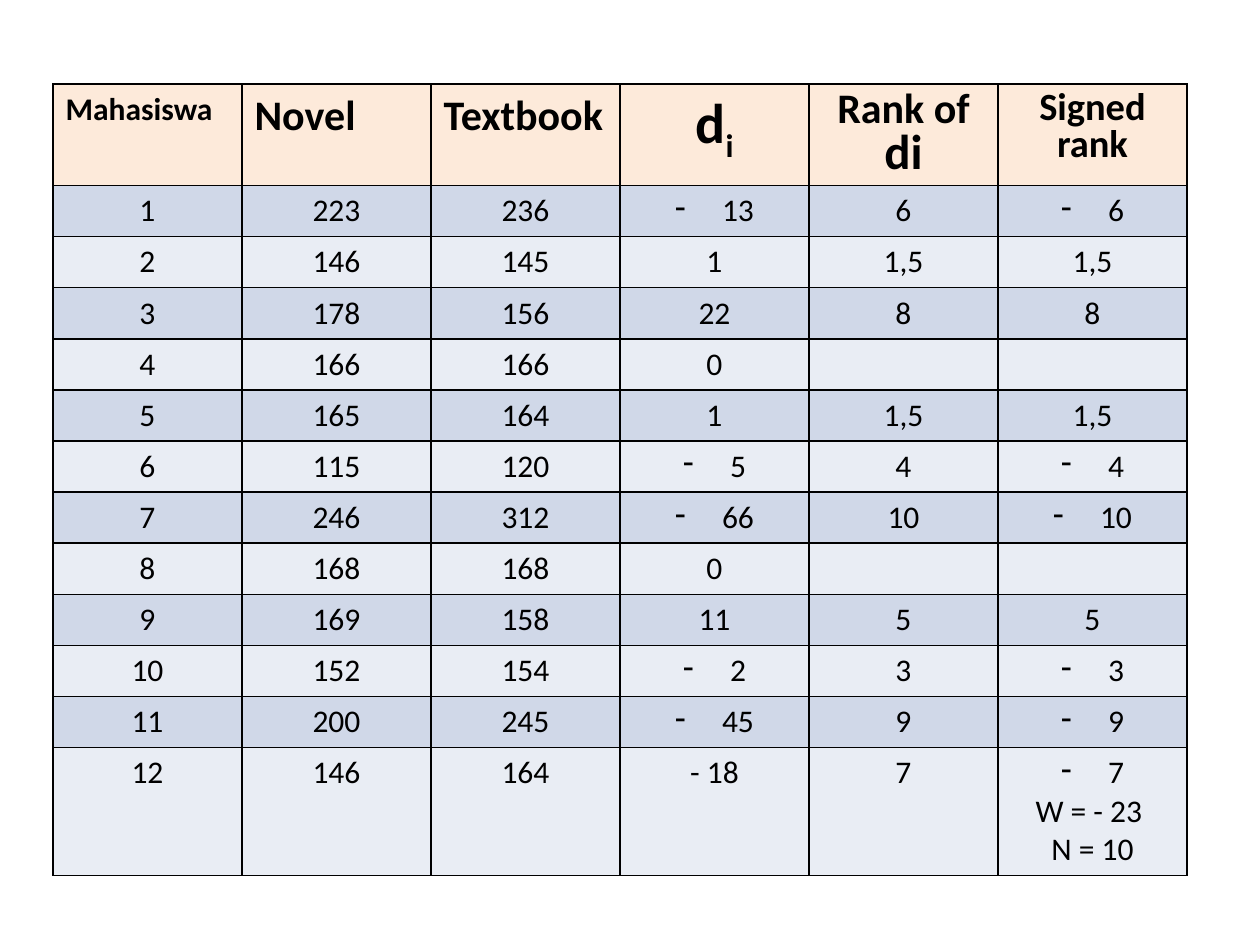
from dataclasses import dataclass

from lxml import etree
from pptx import Presentation
from pptx import util as u
from pptx.dml.color import RGBColor
from pptx.enum import text
from pptx.oxml import ns

PX = 914400 / 126


def px(n):
    return u.Emu(round(n * PX))


@dataclass(frozen=True)
class Theme:
    font: str = "Calibri"
    ink: str = "000000"
    header: str = "FDEADA"
    bands: tuple = ("D0D8E8", "E9EDF4")
    body_size: int = 18
    border: float = 1
    bullet_indent: int = 47


# Each heading: runs as (text, size, baseline percent), centred, line spacing
HEADINGS = [
    ([("Mahasiswa", 18, 0)], False, None),
    ([("Novel", 24, 0)], False, None),
    ([("Textbook", 24, 0)], False, None),
    ([("d", 32, 0), ("i", 32, -25)], True, None),
    ([("Rank of ", 24, 0), ("di", 28, 0)], True, 0.8),
    ([("Signed rank", 22, 0)], True, 0.8),
]

# Novel, textbook, difference, rank, signed rank; "-13" becomes a dash bullet
SCORES = [
    ("223", "236", "-13", "6", "-6"),
    ("146", "145", "1", "1,5", "1,5"),
    ("178", "156", "22", "8", "8"),
    ("166", "166", "0", "", ""),
    ("165", "164", "1", "1,5", "1,5"),
    ("115", "120", "-5", "4", "-4"),
    ("246", "312", "-66", "10", "-10"),
    ("168", "168", "0", "", ""),
    ("169", "158", "11", "5", "5"),
    ("152", "154", "-2", "3", "-3"),
    ("200", "245", "-45", "9", "-9"),
    ("146", "164", "- 18", "7", "-7\nW = - 23 \nN = 10"),
]


class Deck:
    """Holds the theme and the current slide."""

    def __init__(self, theme, width, height):
        self.theme = theme
        self.prs = Presentation()
        self.prs.slide_width, self.prs.slide_height = px(width), px(height)
        self.s = None

    def slide(self):
        self.s = self.prs.slides.add_slide(self.prs.slide_layouts[6])

    def table(self, left, top, col_width, cols, heights):
        frame = self.s.shapes.add_table(
            len(heights), cols, px(left), px(top),
            px(col_width * cols), px(sum(heights)))
        table = frame.table
        table.first_row = table.horz_banding = False
        for column in table.columns:
            column.width = px(col_width)
        for row, height in zip(table.rows, heights):
            row.height = px(height)
        return table

    def paint(self, cell, fill):
        """Gives the cell its borders and fill."""
        tcPr = cell._tc.get_or_add_tcPr()
        for side in ("lnL", "lnR", "lnT", "lnB"):
            ln = etree.SubElement(tcPr, ns.qn(f"a:{side}"),
                                  w=str(u.Pt(self.theme.border)))
            solid = etree.SubElement(ln, ns.qn("a:solidFill"))
            etree.SubElement(solid, ns.qn("a:srgbClr"), val=self.theme.ink)
        cell.fill.solid()
        cell.fill.fore_color.rgb = RGBColor.from_string(fill)

    def style(self, r, size, bold=False):
        r.font.name = self.theme.font
        r.font.size = u.Pt(size)
        r.font.bold = bold
        r.font.color.rgb = RGBColor.from_string(self.theme.ink)

    def bullet(self, p):
        pPr = p._p.get_or_add_pPr()
        indent = px(self.theme.bullet_indent)
        pPr.set("marL", str(indent))
        pPr.set("indent", str(-indent))
        etree.SubElement(pPr, ns.qn("a:buFontTx"))
        etree.SubElement(pPr, ns.qn("a:buChar"), char="-")

    def heading(self, cell, runs, centred, spacing):
        self.paint(cell, self.theme.header)
        p = cell.text_frame.paragraphs[0]
        if centred:
            p.alignment = text.PP_ALIGN.CENTER
        if spacing:
            p.line_spacing = spacing
        for content, size, baseline in runs:
            r = p.add_run()
            r.text = content
            self.style(r, size, bold=True)
            if baseline:
                r.font._element.set("baseline", str(baseline * 1000))

    def value(self, cell, content, fill):
        self.paint(cell, fill)
        tf = cell.text_frame
        lines = content.split("\n")
        tf.text = "\n".join(
            line if line.startswith("- ") else line.removeprefix("-")
            for line in lines)
        for p, line in zip(tf.paragraphs, lines):
            p.alignment = text.PP_ALIGN.CENTER
            if line.startswith("-") and not line.startswith("- "):
                self.bullet(p)
            for r in p.runs:
                self.style(r, self.theme.body_size)


def main():
    theme = Theme()
    deck = Deck(theme, 1260, 945)
    deck.slide()
    heights = [101] + [51] * (len(SCORES) - 1) + [128]
    table = deck.table(53, 84, 189, len(HEADINGS), heights)
    for col, heading in enumerate(HEADINGS):
        deck.heading(table.cell(0, col), *heading)
    for student, scores in enumerate(SCORES, 1):
        fill = theme.bands[(student - 1) % 2]
        for col, content in enumerate((str(student), *scores)):
            deck.value(table.cell(student, col), content, fill)
    deck.prs.save("out.pptx")


if __name__ == "__main__":
    main()
